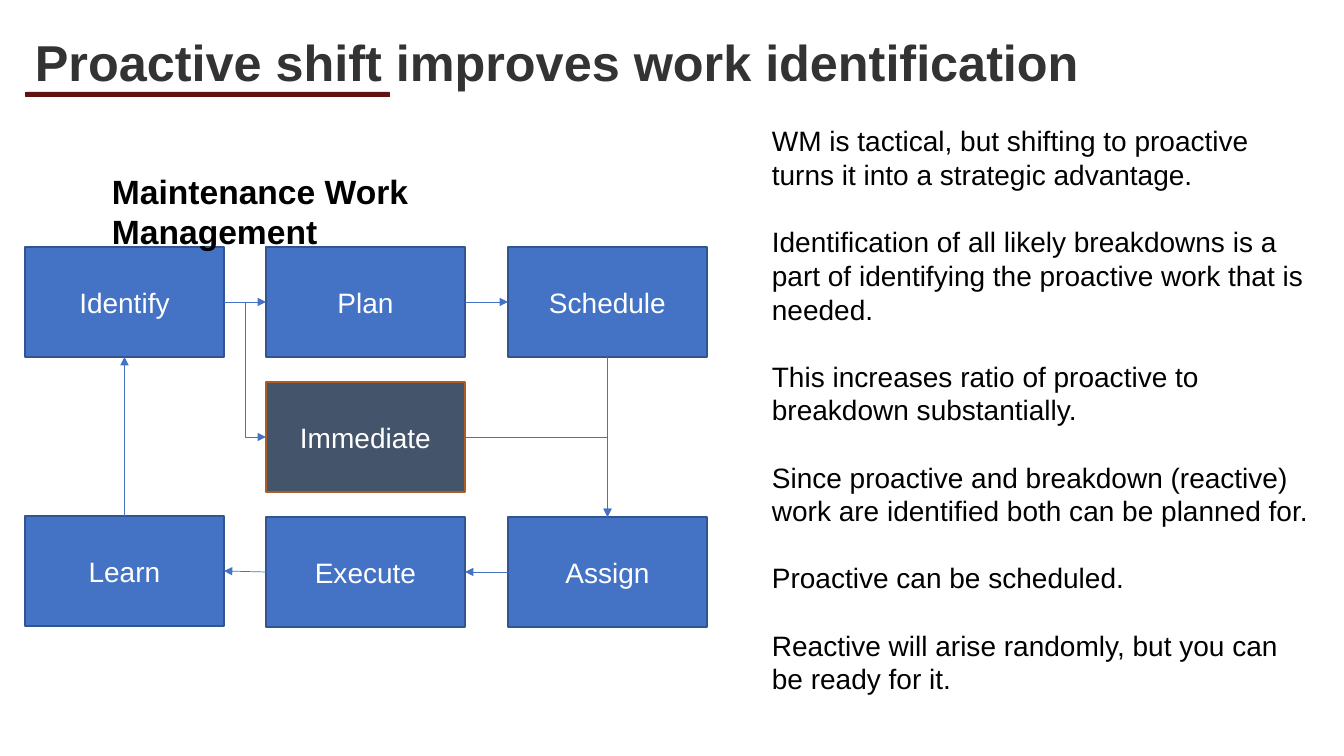
from lxml import etree
from pptx import Presentation
from pptx import util as u
from pptx.dml.color import RGBColor
from pptx.enum import shapes, text
from pptx.oxml.ns import qn

PX = 914400 / 100.8
COLORS = {
    "title": "333333", "rule": "611112", "text": "000000", "label": "FFFFFF",
    "step": "4472C4", "step_edge": "325491",
    "immediate": "44546A", "immediate_edge": "AF5C24",
}
FONT = "Arial"
TOP, LEFT, BOTTOM, RIGHT = range(4)


def px(*lengths):
    return [u.Emu(round(n * PX)) for n in lengths]


def write(shape, paragraphs, color, size, bold=False, gap=0, align=None, **frame_format):
    """Fill a shape's text frame, with gap points between paragraphs."""
    frame = shape.text_frame
    frame.word_wrap = True
    for name, value in frame_format.items():
        setattr(frame, name, value)
    for i, words in enumerate(paragraphs):
        paragraph = frame.paragraphs[0] if i == 0 else frame.add_paragraph()
        paragraph.alignment = align
        if i:
            paragraph.space_before = u.Pt(gap)
        run = paragraph.add_run()
        run.text = words
        for name, value in {"name": FONT, "size": u.Pt(size), "bold": bold}.items():
            setattr(run.font, name, value)
        run.font.color.rgb = RGBColor.from_string(COLORS[color])


prs = Presentation()
prs.slide_width, prs.slide_height = px(1344, 756)
slide = prs.slides.add_slide(prs.slide_layouts[6])
canvas = slide.shapes

# Title and its rule
rule = canvas.add_shape(shapes.MSO_SHAPE.ROUNDED_RECTANGLE, *px(25, 92, 365, 5))
rule.shadow.inherit = False
rule.fill.solid()
rule.fill.fore_color.rgb = RGBColor.from_string(COLORS["rule"])
rule.line.fill.background()

title = canvas.add_textbox(*px(25, 2, 1076, 95))
write(title, ["Proactive shift improves work identification"], "title", 36, bold=True,
      vertical_anchor=text.MSO_ANCHOR.BOTTOM)
title.text_frame.paragraphs[0].line_spacing = 0.9

# Steps of the work cycle
COLUMNS = (25, 266, 508)
ROWS = (247, 382, 517)
steps = {}
for name, column, top in (
    ("Identify", 0, ROWS[0]), ("Plan", 1, ROWS[0]), ("Schedule", 2, ROWS[0]),
    ("Immediate", 1, ROWS[1]),
    ("Learn", 0, ROWS[2] - 1), ("Execute", 1, ROWS[2]), ("Assign", 2, ROWS[2]),
):
    kind = "immediate" if name == "Immediate" else "step"
    step = canvas.add_shape(shapes.MSO_SHAPE.RECTANGLE, *px(COLUMNS[column], top, 199, 110))
    step.shadow.inherit = False
    step.fill.solid()
    step.fill.fore_color.rgb = RGBColor.from_string(COLORS[kind])
    step.line.color.rgb = RGBColor.from_string(COLORS[kind + "_edge"])
    step.line.width = u.Pt(1)
    write(step, [name], "label", 20, align=text.PP_ALIGN.CENTER,
          vertical_anchor=text.MSO_ANCHOR.MIDDLE)
    steps[name] = step

# Arrows between the steps
STRAIGHT, ELBOW = shapes.MSO_CONNECTOR.STRAIGHT, shapes.MSO_CONNECTOR.ELBOW
for route, source, source_side, target, target_side in (
    (STRAIGHT, "Identify", RIGHT, "Plan", LEFT),
    (STRAIGHT, "Plan", RIGHT, "Schedule", LEFT),
    (STRAIGHT, "Schedule", BOTTOM, "Assign", TOP),
    (STRAIGHT, "Assign", LEFT, "Execute", RIGHT),
    (STRAIGHT, "Execute", LEFT, "Learn", RIGHT),
    (STRAIGHT, "Learn", TOP, "Identify", BOTTOM),
    (ELBOW, "Identify", RIGHT, "Immediate", LEFT),
    (ELBOW, "Immediate", RIGHT, "Assign", TOP),
):
    arrow = canvas.add_connector(route, 0, 0, 0, 0)
    arrow.begin_connect(steps[source], source_side)
    arrow.end_connect(steps[target], target_side)
    arrow.line.color.rgb = RGBColor.from_string(COLORS["step"])
    arrow.line.width = u.Pt(0.5)
    properties = arrow.element.spPr
    etree.SubElement(properties.find(qn("a:ln")), qn("a:tailEnd"), type="triangle")
    etree.SubElement(properties, qn("a:effectLst"))
    if route == ELBOW and target_side == TOP:
        properties.find(qn("a:prstGeom")).set("prst", "bentConnector2")

# Diagram heading and commentary
heading = canvas.add_textbox(*px(102, 166, 528, 55))
write(heading, ["Maintenance Work Management"], "text", 24, bold=True,
      margin_right=px(130)[0])

commentary = canvas.add_textbox(*px(762, 119, 556, 587))
write(commentary, [
    "WM is tactical, but shifting to proactive turns it into a strategic advantage.",
    "Identification of all likely breakdowns is a part of identifying the proactive work "
    "that is needed.",
    "This increases ratio of proactive to breakdown substantially.",
    "Since proactive and breakdown (reactive) work are identified both can be planned for.",
    "Proactive can be scheduled.",
    "Reactive will arise randomly, but you can be ready for it.",
], "text", 20, gap=24, margin_right=px(5)[0])

prs.save("out.pptx")
